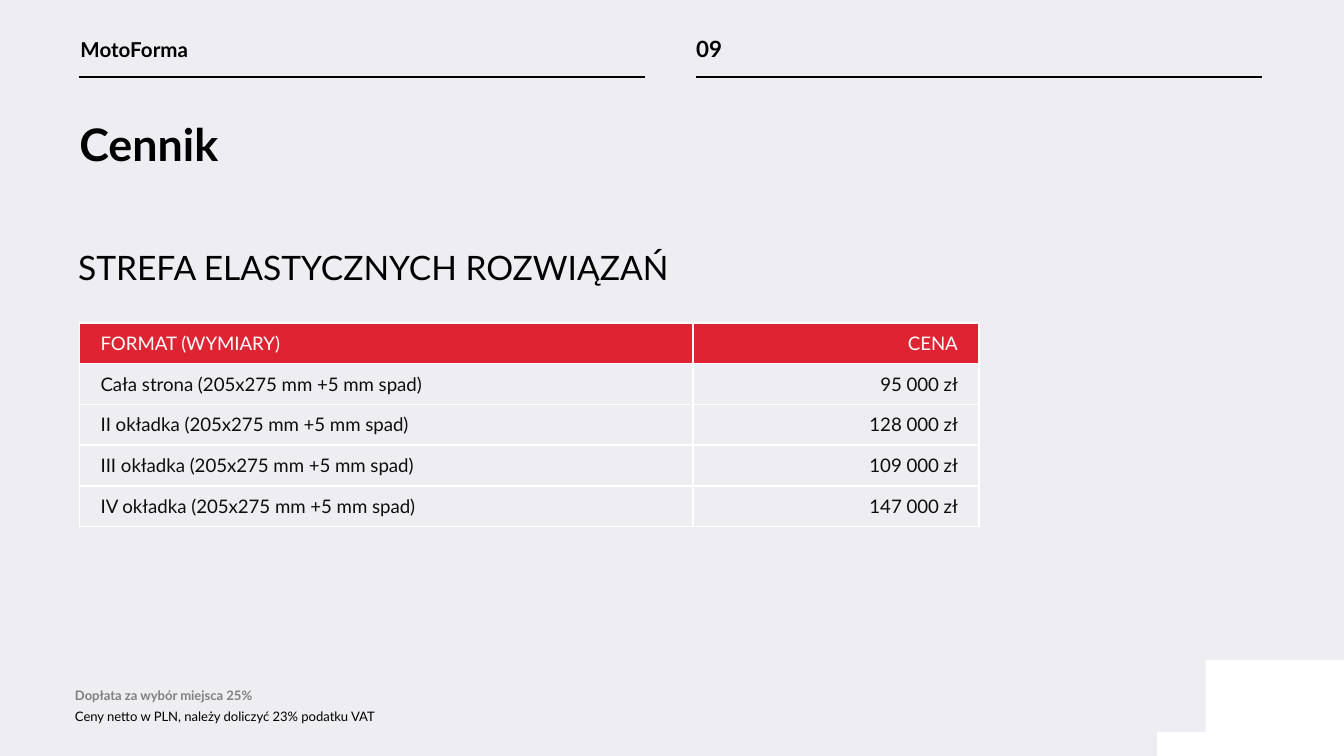
"""Build the price list slide of a motoring magazine."""
import pptx
import pptx.dml.color
import pptx.enum.shapes
import pptx.enum.text
import pptx.oxml
import pptx.oxml.ns
import pptx.util

Pt = pptx.util.Pt
ALIGN = pptx.enum.text.PP_ALIGN
ANCHOR = pptx.enum.text.MSO_ANCHOR
FIT = pptx.enum.text.MSO_AUTO_SIZE

BLACK, WHITE, RED = "000000", "FFFFFF", "DE2432"
INK, GREY, PAPER = "0D0D0D", "808080", "EEEDF2"

TITLE = ("Cennik", 24, True, BLACK)
TEXTS = [
    ((36, 16.5, 199, 17.5), (7.2, 3.6, 7.2, 3.6), ANCHOR.TOP, 1,
     [("MotoForma", 11, True, BLACK)]),
    ((373, 15.2, 160, 21.5), (0, 3.6, 7.2, 3.6), ANCHOR.MIDDLE, 1,
     [("09", 12, True, BLACK)]),
    ((41.8, 126, 405.5, 28), (0, 0, 0, 0), ANCHOR.TOP, 1.3,
     [("STREFA ELASTYCZNYCH ROZWIĄZAŃ", 18, False, BLACK)]),
    ((40.2, 366, 235, 21.8), (0, 0, 0, 0), ANCHOR.TOP, 1.3,
     [("Dopłata za wybór miejsca 25%", 7, True, GREY),
      ("Ceny netto w PLN, należy doliczyć 23% podatku VAT", 7, False, BLACK)]),
]
PRICES = [
    ("FORMAT (WYMIARY)", "CENA"),
    ("Cała strona (205x275 mm +5 mm spad)", "95 000 zł"),
    ("II okładka (205x275 mm +5 mm spad)", "128 000 zł"),
    ("III okładka (205x275 mm +5 mm spad)", "109 000 zł"),
    ("IV okładka (205x275 mm +5 mm spad)", "147 000 zł"),
]
COLS = (328.6, 153.2)
ROW = 21.85
STEP = [(645.9, 353.5), (720, 353.5), (720, 405), (619.9, 405),
        (619.9, 392.2), (645.9, 392.2)]
RULES = (42.4, 373)
RULE_Y, RULE_W = 41.2, 303.2


def tint(color, code):
    """Set a colour from its hex string."""
    color.rgb = pptx.dml.color.RGBColor.from_string(code)


def apply(item, **values):
    """Set each named attribute on an item."""
    for name, value in values.items():
        setattr(item, name, value)


def inset(item, sides):
    """Set the four margins: left, top, right, bottom."""
    for side, size in zip(("left", "top", "right", "bottom"), sides):
        setattr(item, "margin_" + side, Pt(size))


def write(frame, lines, align=ALIGN.LEFT, space=1):
    """Fill a text frame with formatted paragraphs."""
    for i, (text, size, bold, code) in enumerate(lines):
        para = frame.add_paragraph() if i else frame.paragraphs[0]
        apply(para, text=text, alignment=align, line_spacing=space)
        font = para.runs[0].font
        apply(font, name="Lato", size=Pt(size), bold=bold)
        tint(font.color, code)


def edge(cell):
    """Draw thin white borders on all sides of a cell."""
    props = cell._tc.get_or_add_tcPr()
    space = pptx.oxml.ns.nsdecls("a")
    for i, side in enumerate(("lnL", "lnR", "lnT", "lnB")):
        props.insert(i, pptx.oxml.parse_xml(
            f'<a:{side} {space} w="12192"><a:solidFill>'
            f'<a:srgbClr val="{WHITE}"/></a:solidFill></a:{side}>'))


def add_rule(shapes, left):
    """Draw one header rule."""
    kind = pptx.enum.shapes.MSO_CONNECTOR.STRAIGHT
    rule = shapes.add_connector(
        kind, Pt(left), Pt(RULE_Y), Pt(left + RULE_W), Pt(RULE_Y))
    rule.line.width = Pt(1)
    tint(rule.line.color, BLACK)
    rule._element.spPr.append(pptx.oxml.parse_xml(
        f'<a:effectLst {pptx.oxml.ns.nsdecls("a")}/>'))


def add_step(shapes):
    """Draw the white stepped corner."""
    build = shapes.build_freeform(Pt(STEP[0][0]), Pt(STEP[0][1]))
    build.add_line_segments([(Pt(x), Pt(y)) for x, y in STEP[1:]], close=True)
    step = build.convert_to_shape()
    step.shadow.inherit = False
    step.fill.solid()
    tint(step.fill.fore_color, WHITE)
    step.line.fill.background()


def add_prices(shapes):
    """Add the price table."""
    table = shapes.add_table(
        len(PRICES), len(COLS), Pt(42.6), Pt(173),
        Pt(sum(COLS)), Pt(ROW * len(PRICES))).table
    apply(table, first_row=False, horz_banding=False)
    for col, width in zip(table.columns, COLS):
        col.width = Pt(width)
    for r, line in enumerate(PRICES):
        table.rows[r].height = Pt(ROW)
        for c, text in enumerate(line):
            cell = table.cell(r, c)
            inset(cell, (11.3, 3.6, 11.3, 3.6))
            cell.vertical_anchor = ANCHOR.MIDDLE
            write(cell.text_frame, [(text, 10, False, INK if r else WHITE)],
                  ALIGN.RIGHT if c else ALIGN.LEFT)
            if r:
                cell.fill.background()
            else:
                cell.fill.solid()
                tint(cell.fill.fore_color, RED)
            edge(cell)


def main():
    """Build and save the slide."""
    deck = pptx.Presentation()
    apply(deck, slide_width=Pt(720), slide_height=Pt(405))
    slide = deck.slides.add_slide(deck.slide_layouts[5])
    slide.background.fill.solid()
    tint(slide.background.fill.fore_color, PAPER)
    shapes = slide.shapes
    add_step(shapes)
    for left in RULES:
        add_rule(shapes, left)
    title = shapes.title
    apply(title, left=Pt(42.5), top=Pt(59), width=Pt(285), height=Pt(87))
    apply(title.text_frame, word_wrap=True, auto_size=FIT.NONE,
          vertical_anchor=ANCHOR.TOP)
    inset(title.text_frame, (0, 3.6, 7.2, 3.6))
    write(title.text_frame, [TITLE])
    for place, sides, anchor, space, lines in TEXTS:
        frame = shapes.add_textbox(*map(Pt, place)).text_frame
        apply(frame, word_wrap=True, vertical_anchor=anchor)
        inset(frame, sides)
        write(frame, lines, space=space)
    add_prices(shapes)
    deck.save("out.pptx")


if __name__ == "__main__":
    main()
